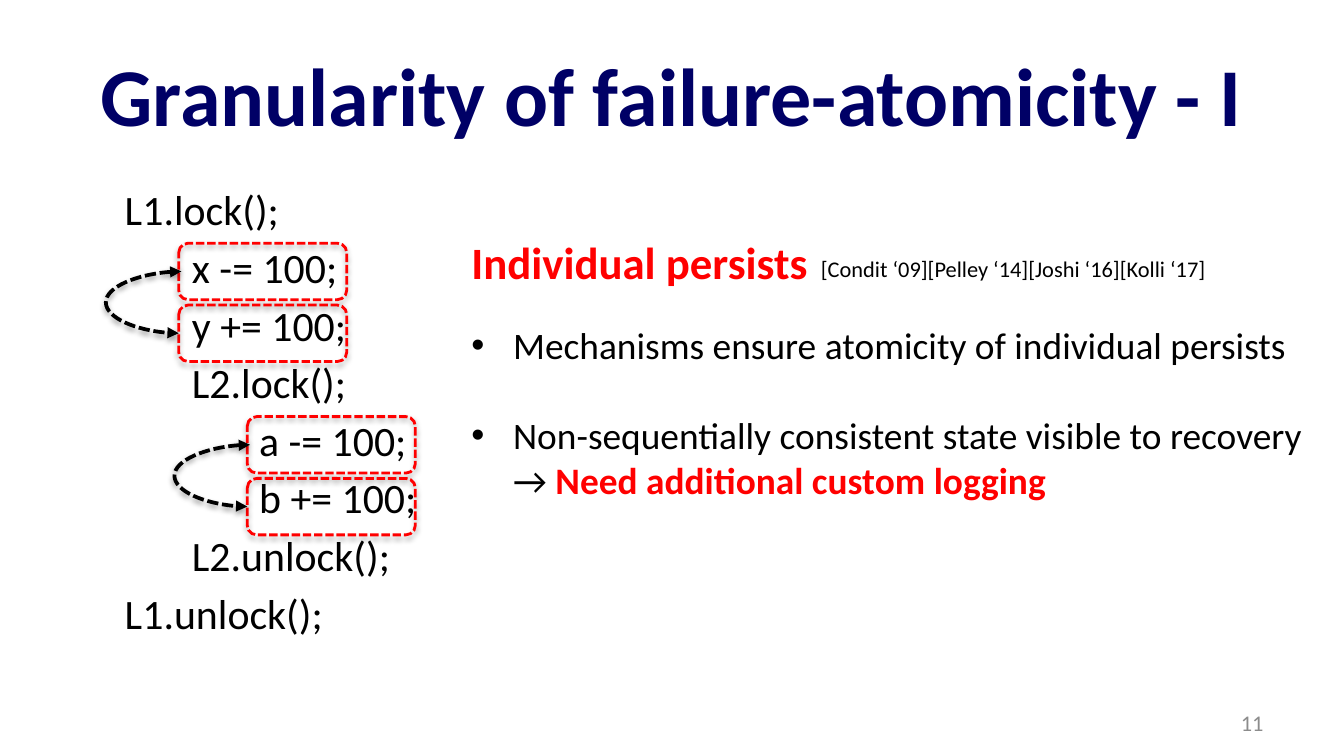
from lxml.etree import SubElement
from pptx import Presentation
from pptx.dml.color import RGBColor
from pptx.enum.dml import MSO_LINE
from pptx.enum.shapes import MSO_CONNECTOR, MSO_SHAPE
from pptx.enum.text import MSO_ANCHOR, PP_ALIGN
from pptx.oxml.ns import qn
from pptx.util import Inches, Pt

NAVY = RGBColor(0x00, 0x00, 0x66)
RED = RGBColor(0xFF, 0x00, 0x00)
BLACK = RGBColor(0x00, 0x00, 0x00)
GRAY = RGBColor(0x8C, 0x8C, 0x8C)
FONT = "Calibri"
CELL = 0.1
INDENT = 5
BULLET_INDENT = 3.1


def cells(count):
    return Inches(count * CELL)


class SlideBuilder:
    """Draws styled elements on a slide, placed in cells of a 0.1 inch grid."""

    def __init__(self, slide):
        self.slide = slide

    def style(self, run, size, color, bold=False):
        run.font.name = FONT
        run.font.size = Pt(size)
        run.font.bold = bold
        run.font.color.rgb = color

    def frame(self, left, top, width, height, wrap=True, anchor=MSO_ANCHOR.TOP):
        box = self.slide.shapes.add_textbox(*map(cells, (left, top, width, height)))
        box.text_frame.word_wrap = wrap
        box.text_frame.vertical_anchor = anchor
        return box.text_frame

    def label(self, text, area, size, color, bold=False, align=PP_ALIGN.LEFT, wrap=True,
              anchor=MSO_ANCHOR.TOP):
        frame = self.frame(*area, wrap, anchor)
        frame.text = text
        frame.paragraphs[0].alignment = align
        self.style(frame.paragraphs[0].runs[0], size, color, bold)

    def code(self, lines, area, size):
        frame = self.frame(*area)
        frame.text = "\n".join(lines)
        for number, line in enumerate(frame.paragraphs):
            stops = SubElement(line._p.get_or_add_pPr(), qn("a:tabLst"))
            for depth in (1, 2):
                SubElement(stops, qn("a:tab"), pos=str(cells(depth * INDENT)), algn="l")
            line.space_before = Pt(4 if number else 0)
            self.style(line.runs[0], size, BLACK)

    def bullets(self, points, area, size):
        frame = self.frame(*area)
        for number, pieces in enumerate(points):
            point = frame.add_paragraph() if number else frame.paragraphs[0]
            properties = point._p.get_or_add_pPr()
            properties.set("marL", str(cells(BULLET_INDENT)))
            properties.set("indent", str(-cells(BULLET_INDENT)))
            SubElement(properties, qn("a:buFont"), typeface="Arial")
            SubElement(properties, qn("a:buChar"), char="•")
            point.space_before = Pt(24 if number else 0)
            for text, color, bold in pieces:
                run = point.add_run()
                run.text = text
                self.style(run, size, color, bold)

    def shadow(self, shape, opacity, distance):
        effects = shape._element.spPr.find(qn("a:effectLst"))
        if effects is None:
            effects = SubElement(shape._element.spPr, qn("a:effectLst"))
        outer = SubElement(effects, qn("a:outerShdw"), blurRad=str(Pt(3.1)),
                           dist=str(Pt(distance)), dir="5400000", rotWithShape="0")
        tint = SubElement(outer, qn("a:srgbClr"), val=str(BLACK))
        SubElement(tint, qn("a:alpha"), val=str(opacity * 1000))

    def dash(self, line, color, width):
        line.color.rgb = color
        line.width = Pt(width)
        line.dash_style = MSO_LINE.SQUARE_DOT
        line._ln.find(qn("a:prstDash")).set("val", "sysDash")

    def persist(self, left, top, width=12.5, height=4.2):
        outline = self.slide.shapes.add_shape(
            MSO_SHAPE.ROUNDED_RECTANGLE, *map(cells, (left, top, width, height)))
        outline.shadow.inherit = False
        outline.fill.background()
        self.dash(outline.line, RED, 1.5)
        self.shadow(outline, 35, 1.8)

    def order_arrow(self, left, top, bottom, reach=5.6, offset=0.2):
        curve = self.slide.shapes.add_connector(
            MSO_CONNECTOR.CURVE, *map(cells, (left + offset, top, left, bottom)))
        guides = curve._element.spPr.find(qn("a:prstGeom")).get_or_add_avLst()
        bend = round(reach / offset * 100000)
        SubElement(guides, qn("a:gd"), name="adj1", fmla=f"val {bend}")
        self.dash(curve.line, BLACK, 2)
        for end in ("a:headEnd", "a:tailEnd"):
            SubElement(curve.line._ln, qn(end), type="triangle")
        self.shadow(curve, 38, 1.6)

    def persist_pair(self, left, top, gap=4.6):
        self.persist(left, top)
        self.persist(left, top + gap)
        self.order_arrow(left, top + 2.1, top + gap + 2.1)


def main():
    deck = Presentation()
    deck.slide_width, deck.slide_height = Inches(10), Inches(5.625)
    page = SlideBuilder(deck.slides.add_slide(deck.slide_layouts[6]))

    page.label("Granularity of failure-atomicity - I", (5, 2.3, 90, 9.4), 44, NAVY, True,
               PP_ALIGN.CENTER, anchor=MSO_ANCHOR.MIDDLE)
    page.label("11", (71.7, 52.3, 23.3, 3), 12, GRAY, align=PP_ALIGN.RIGHT,
               anchor=MSO_ANCHOR.MIDDLE)
    page.code(["L1.lock();", "\tx -= 100;", "\ty += 100;", "\tL2.lock();", "\t\ta -= 100;",
               "\t\tb += 100;", "\tL2.unlock();", "L1.unlock();"], (8.3, 13.2, 26, 37.1), 22.4)
    for left, top in ((13.3, 18.1), (18.4, 31)):
        page.persist_pair(left, top)
    page.label("Individual persists", (34.1, 17, 27.4, 5), 24, RED, True, wrap=False)
    page.label("[Condit ‘09][Pelley ‘14][Joshi ‘16][Kolli ‘17]", (60.1, 18.5, 31.4, 3), 12,
               BLACK, wrap=False)
    page.bullets([
        [("Mechanisms ensure atomicity of individual persists", BLACK, False)],
        [("Non-sequentially consistent state visible to recovery → ", BLACK, False),
         ("Need additional custom logging", RED, True)],
    ], (34.1, 23.5, 64.3, 14.5), 20)
    deck.save("out.pptx")


if __name__ == "__main__":
    main()
